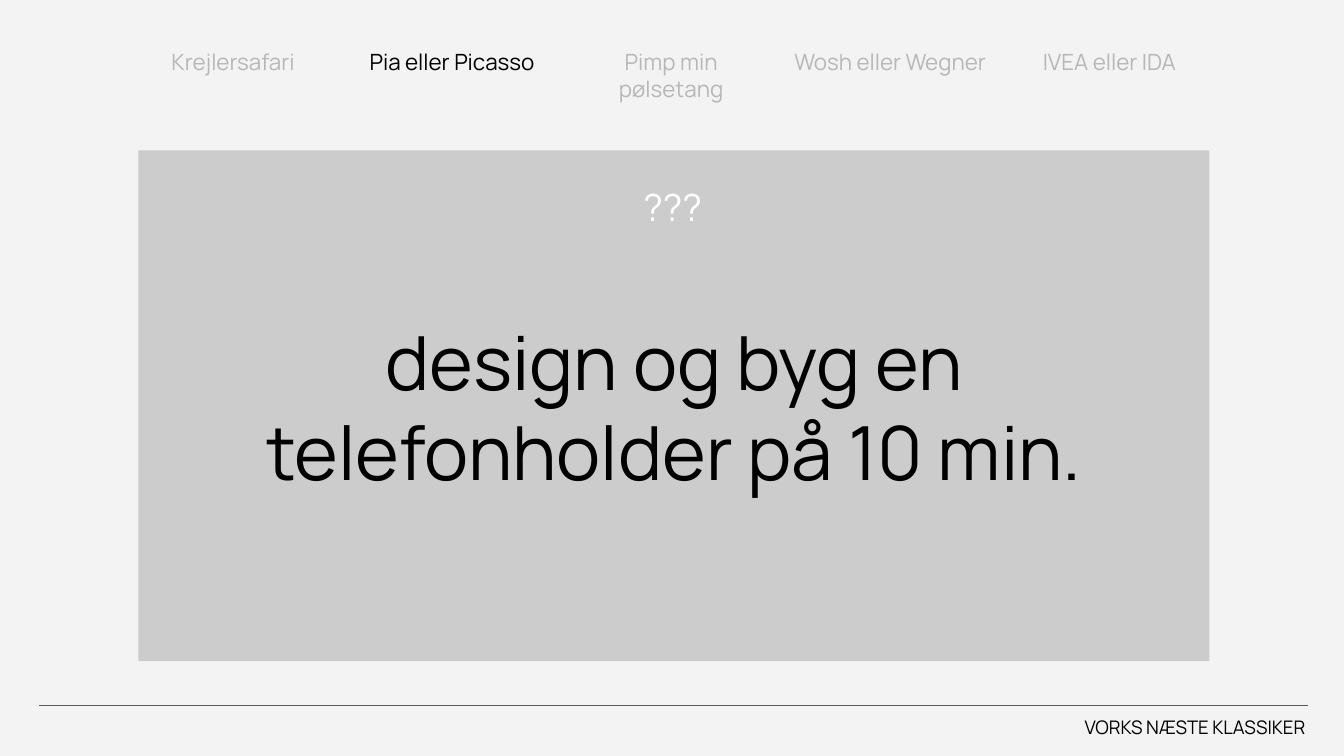
from lxml import etree
from pptx import Presentation
from pptx import util as u
from pptx.dml.color import RGBColor
from pptx.enum import shapes, text
from pptx.oxml.ns import qn

# Content
TABS = ["Krejlersafari", "Pia eller Picasso", "Pimp min pølsetang",
        "Wosh eller Wegner", "IVEA eller IDA"]
ACTIVE_TAB = "Pia eller Picasso"
TEASER = "???"
CHALLENGE = "design og byg en telefonholder på 10 min."
FOOTER = "VORKS NÆSTE KLASSIKER"

# Style and layout
FONT = "Manrope"
BLACK, WHITE, MUTED = "000000", "FFFFFF", "B7B7B7"
PAPER, PANEL, RULE = "F3F3F3", "CCCCCC", "595959"
TAB_LEFT, TAB_TOP, TAB_WIDTH, TAB_HEIGHT = 0.92, 0.26, 1.63, 0.4


def color(value):
    return RGBColor.from_string(value)


def write(shape, content, size=12, ink=BLACK, align=text.PP_ALIGN.CENTER,
          anchor=text.MSO_ANCHOR.TOP, grow=True):
    frame = shape.text_frame
    frame.word_wrap = True
    frame.vertical_anchor = anchor
    frame.margin_left = frame.margin_right = u.Inches(0.1)
    frame.margin_top = frame.margin_bottom = u.Inches(0.1)
    frame.auto_size = (text.MSO_AUTO_SIZE.SHAPE_TO_FIT_TEXT if grow
                       else text.MSO_AUTO_SIZE.NONE)
    paragraph = frame.paragraphs[0]
    paragraph.alignment = align
    run = paragraph.add_run()
    run.text = content
    run.font.name = FONT
    run.font.size = u.Pt(size)
    run.font.color.rgb = color(ink)


def add_text(slide, box, content, **style):
    write(slide.shapes.add_textbox(*map(u.Inches, box)), content, **style)


# Widescreen slide, 16 to 9
presentation = Presentation()
presentation.slide_width = u.Inches(10)
presentation.slide_height = u.Inches(10) * 9 // 16
slide = presentation.slides.add_slide(presentation.slide_layouts[6])
slide.background.fill.solid()
slide.background.fill.fore_color.rgb = color(PAPER)

# Footer with its rule
add_text(slide, (2.93, 5.24, 6.88, 0.37), FOOTER, size=10,
         align=text.PP_ALIGN.RIGHT)
rule = slide.shapes.add_connector(
    shapes.MSO_CONNECTOR.STRAIGHT,
    *map(u.Inches, (0.29, 5.25, 9.73, 5.25)))
rule.line.color.rgb = color(RULE)
rule.line.width = u.Pt(0.75)
etree.SubElement(rule.element.spPr, qn("a:effectLst"))

# Challenge panel
panel = slide.shapes.add_shape(
    shapes.MSO_SHAPE.RECTANGLE, *map(u.Inches, (1.03, 1.12, 7.97, 3.8)))
panel.shadow.inherit = False
panel.fill.solid()
panel.fill.fore_color.rgb = color(PANEL)
panel.line.fill.background()
write(panel, CHALLENGE, size=40, anchor=text.MSO_ANCHOR.MIDDLE, grow=False)
add_text(slide, (4.19, 1.27, 1.63, 0.54), TEASER, size=20, ink=WHITE)

# Tabs in equal columns
for index, tab in enumerate(TABS):
    add_text(slide, (TAB_LEFT + index * TAB_WIDTH, TAB_TOP, TAB_WIDTH, TAB_HEIGHT),
             tab, ink=BLACK if tab == ACTIVE_TAB else MUTED)

presentation.save("out.pptx")
